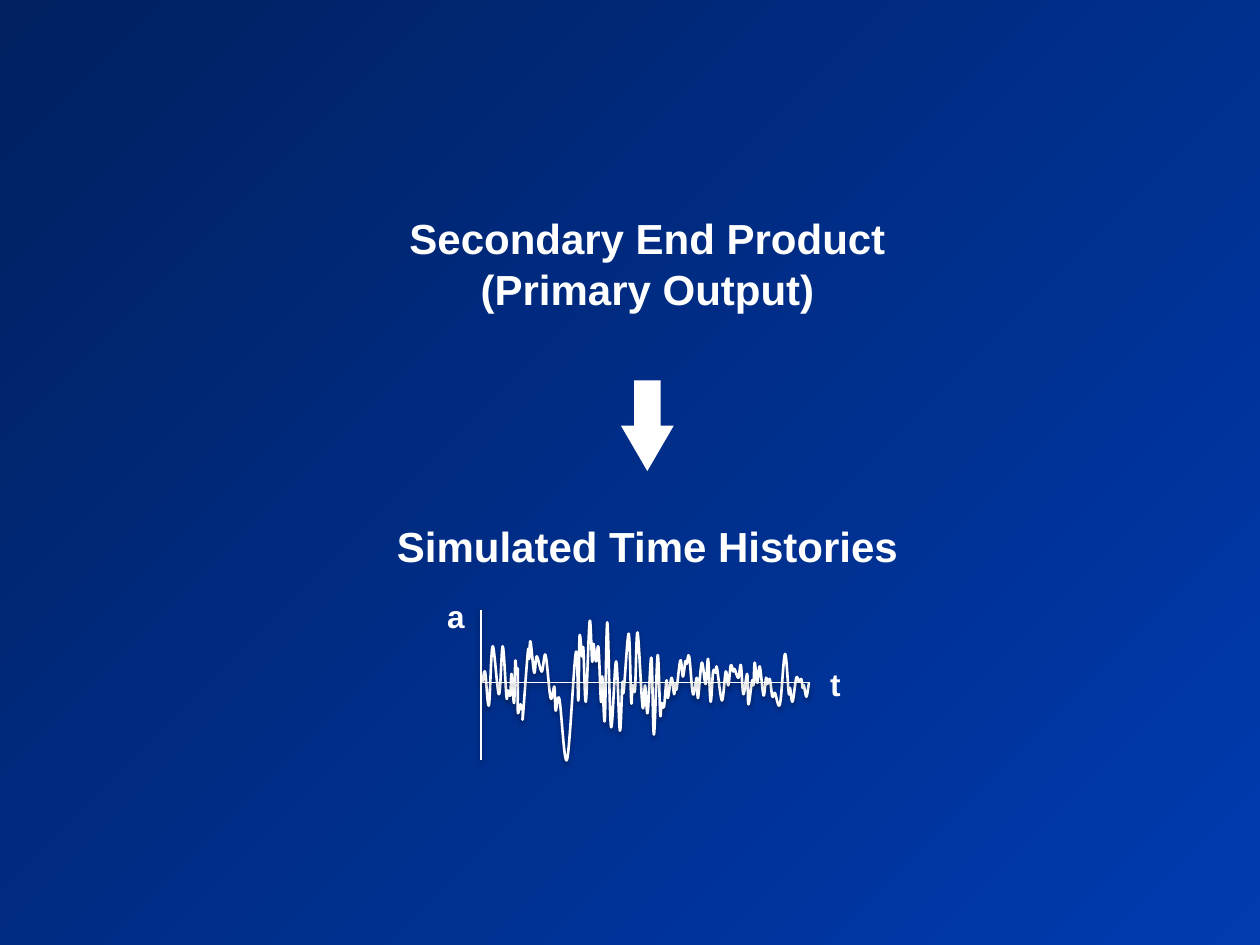
"""Build a slide that leads from a primary output to a simulated time history."""
from lxml import etree
from pptx import Presentation
from pptx import util as u
from pptx.dml.color import RGBColor
from pptx.enum import shapes, text
from pptx.oxml import ns

COLORS = {"white": "FFFFFF", "navy": "002060", "blue": "003BB0", "shadow": "000000"}
FONT = "Arial"
HEADINGS = [
    (["Secondary End Product", "(Primary Output)"], (180, 118, 380, 65.5)),
    (["Simulated Time Histories"], (180, 293.8, 380, 36)),
]
AXIS_LABELS = [("a", (244, 337.7, 33.1, 28.8)), ("t", (460.8, 376.6, 33.1, 28.8))]
AXES = [(275, 348.5, 275, 434.2), (275.8, 389.95, 463, 389.95)]
ARROW = (354.8, 217.4, 30.2, 51.8)
GRID = 0.72
WAVE = [
    (383, 542), (385, 533), (388, 560), (391, 513), (396, 551), (399, 513), (402, 553),
    (403, 548), (405, 552), (406, 535), (408, 558), (409, 525), (410, 535), (411, 532),
    (411, 565), (413, 559), (414, 563), (415, 562), (415, 569), (419, 517), (420, 523),
    (421, 509), (424, 534), (426, 521), (430, 533), (433, 520), (437, 554), (440, 545),
    (441, 564), (444, 555), (450, 603), (457, 518), (459, 556), (460, 505), (462, 521),
    (463, 515), (465, 557), (468, 493), (470, 525), (471, 511), (473, 525), (475, 514),
    (477, 557), (478, 537), (480, 572), (482, 494), (485, 577), (489, 525), (492, 580),
    (494, 542), (495, 549), (499, 503), (501, 557), (502, 544), (504, 547), (506, 502),
    (510, 561), (512, 544), (514, 566), (517, 522), (519, 583), (522, 520), (524, 567),
    (525, 558), (527, 561), (529, 540), (530, 554), (533, 538), (535, 551), (536, 543),
    (537, 547), (540, 524), (542, 537), (544, 525), (545, 527), (547, 521), (550, 551),
    (553, 538), (554, 554), (557, 526), (560, 543), (562, 523), (564, 557), (566, 533),
    (568, 534), (569, 530), (573, 556), (576, 533), (578, 544), (580, 528), (582, 533),
    (583, 531), (586, 538), (588, 528), (590, 551), (593, 535), (594, 559), (597, 540),
    (598, 544), (599, 526), (601, 542), (603, 529), (606, 552), (608, 538), (609, 543),
    (611, 539), (613, 553), (615, 550), (619, 559), (623, 519), (626, 550), (627, 546),
    (629, 557), (632, 538), (634, 541), (636, 539), (637, 546), (638, 544), (640, 553),
    (642, 542),
]


def color(name):
    return RGBColor.from_string(COLORS[name])


def smooth(shape):
    """Turn the straight segments of an outline into Catmull-Rom curves."""
    points = [(int(point.get("x")), int(point.get("y")))
              for point in shape._element.iter(ns.qn("a:pt"))]
    padded = [points[0], *points, points[-1]]
    segments = list(shape._element.iter(ns.qn("a:lnTo")))
    for segment, before, start, end, after in zip(
            segments, padded, padded[1:], padded[2:], padded[3:]):
        leave = [b + (c - a) / 6 for a, b, c in zip(before, start, end)]
        arrive = [c - (d - b) / 6 for b, c, d in zip(start, end, after)]
        curve = etree.Element(ns.qn("a:cubicBezTo"))
        for x, y in (leave, arrive, end):
            etree.SubElement(curve, ns.qn("a:pt"), x=str(round(x)), y=str(round(y)))
        segment.getparent().replace(segment, curve)


def add_text(parent, lines, place, size):
    box = parent.add_textbox(*map(u.Pt, place))
    box.text_frame.word_wrap = True
    para = box.text_frame.paragraphs[0]
    para.alignment = text.PP_ALIGN.CENTER
    for index, line in enumerate(lines):
        if index:
            para.add_line_break()
        span = para.add_run()
        span.text = line
        span.font.name, span.font.size, span.font.bold = FONT, u.Pt(size), True
        span.font.color.rgb = color("white")


def style_line(shape, width, distance, opacity):
    shape.line.color.rgb = color("white")
    shape.line.width = u.Pt(width)
    effects = etree.SubElement(shape._element.spPr, ns.qn("a:effectLst"))
    shadow = etree.SubElement(effects, ns.qn("a:outerShdw"), blurRad=str(u.Pt(3.1)),
                              dist=str(u.Pt(distance)), dir="5400000", rotWithShape="0")
    tone = etree.SubElement(shadow, ns.qn("a:srgbClr"), val=COLORS["shadow"])
    etree.SubElement(tone, ns.qn("a:alpha"), val=str(opacity * 1000))


def add_plot(slide):
    plot = slide.shapes.add_group_shape().shapes
    knots = [(u.Pt(x * GRID), u.Pt(y * GRID)) for x, y in WAVE]
    builder = plot.build_freeform(*knots[0])
    builder.add_line_segments(knots[1:], close=False)
    trace = builder.convert_to_shape()
    smooth(trace)
    trace.fill.background()
    style_line(trace, 1.5, 1.8, 35)
    for ends in AXES:
        axis = plot.add_connector(shapes.MSO_CONNECTOR.STRAIGHT, *map(u.Pt, ends))
        style_line(axis, 1, 1.6, 38)
    for label, place in AXIS_LABELS:
        add_text(plot, [label], place, 18)


def main():
    deck = Presentation()
    deck.slide_width, deck.slide_height = u.Pt(720), u.Pt(540)
    slide = deck.slides.add_slide(deck.slide_layouts[6])
    backdrop = slide.background.fill
    backdrop.gradient()
    backdrop.gradient_angle = 315
    for stop, name, position in zip(backdrop.gradient_stops, ("navy", "blue"), (0, 1)):
        stop.color.rgb = color(name)
        stop.position = position

    arrow = slide.shapes.add_shape(shapes.MSO_SHAPE.DOWN_ARROW, *map(u.Pt, ARROW))
    arrow.adjustments[0], arrow.adjustments[1] = 0.5, 0.86
    arrow.shadow.inherit = False
    arrow.fill.solid()
    arrow.fill.fore_color.rgb = color("white")
    arrow.line.fill.background()
    for lines, place in HEADINGS:
        add_text(slide.shapes, lines, place, 24)
    add_plot(slide)
    deck.save("out.pptx")


if __name__ == "__main__":
    main()
